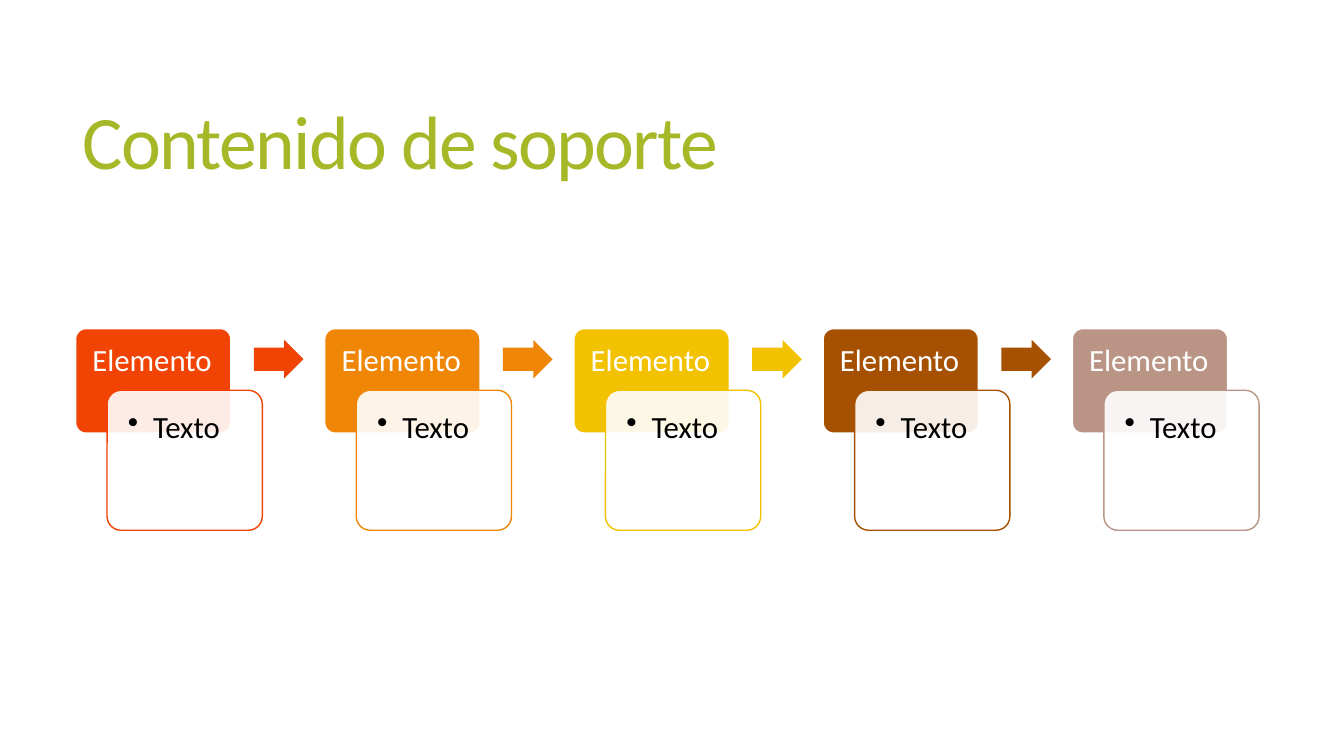
from lxml.etree import SubElement
from pptx import Presentation
from pptx.dml.color import RGBColor
from pptx.enum.shapes import MSO_SHAPE as Preset
from pptx.enum.text import MSO_ANCHOR as Anchor, PP_ALIGN as Align
from pptx.oxml.ns import qn
from pptx.util import Pt

WHITE = RGBColor(0xFF, 0xFF, 0xFF)
BLACK = RGBColor(0x00, 0x00, 0x00)
GREEN = RGBColor(0xA6, 0xB7, 0x27)
STEP_COLORS = [
    RGBColor(0xF0, 0x43, 0x04),
    RGBColor(0xEF, 0x86, 0x06),
    RGBColor(0xF2, 0xC1, 0x00),
    RGBColor(0xA6, 0x50, 0x01),
    RGBColor(0xBA, 0x95, 0x85),
]
FIRST_LEFT = 54
STEP_PITCH = 178


class SlideBuilder:
    font = "Calibri"

    def __init__(self, page):
        self.page = page

    def shape(self, preset, bounds, adjustments, fill, line=None, opacity=None):
        shape = self.page.shapes.add_shape(preset, *map(Pt, bounds))
        shape.shadow.inherit = False
        for index, value in enumerate(adjustments):
            shape.adjustments[index] = value
        shape.fill.solid()
        shape.fill.fore_color.rgb = fill
        if opacity is not None:
            color = shape.fill._xPr.find(qn("a:solidFill"))[0]
            SubElement(color, qn("a:alpha"), val=str(opacity * 1000))
        if line is None:
            shape.line.fill.background()
        else:
            shape.line.color.rgb = line
            shape.line.width = Pt(1)

    def text(self, bounds, words, size, color, insets, spacing=0.9,
             anchor=Anchor.TOP, bullet=False, tracking=None):
        box = self.page.shapes.add_textbox(*map(Pt, bounds))
        frame = box.text_frame
        frame.word_wrap = True
        frame.vertical_anchor = anchor
        (frame.margin_left, frame.margin_top,
         frame.margin_right, frame.margin_bottom) = map(Pt, insets)
        para = frame.paragraphs[0]
        para.alignment = Align.LEFT
        para.line_spacing = spacing
        if bullet:
            props = para._p.get_or_add_pPr()
            props.set("marL", str(Pt(18)))
            props.set("indent", str(-Pt(18)))
            SubElement(props, qn("a:buChar"), char="•")
        span = para.add_run()
        span.text = words
        span.font.name = self.font
        span.font.size = Pt(size)
        span.font.color.rgb = color
        if tracking is not None:
            span._r.get_or_add_rPr().set("spc", str(round(tracking * 100)))

    def step(self, left, color, has_arrow):
        self.shape(Preset.ROUNDED_RECTANGLE, (left, 234.7, 110.9, 74.7),
                   [0.1], color, WHITE)
        self.text((left, 234.7, 110.9, 44.6), "Elemento", 22, WHITE,
                  (12, 12, 12, 6.5))
        self.shape(Preset.ROUNDED_RECTANGLE, (left + 22.5, 278.8, 110.9, 100),
                   [0.1], WHITE, color, opacity=90)
        self.text((left + 25.4, 282, 105, 93.6), "Texto", 22, BLACK,
                  (12, 12, 12, 12), bullet=True)
        if has_arrow:
            self.shape(Preset.RIGHT_ARROW, (left + 127.3, 242.8, 35.5, 27.6),
                       [0.6, 0.5], color)


def main():
    deck = Presentation()
    deck.slide_width = Pt(960)
    deck.slide_height = Pt(540)
    builder = SlideBuilder(deck.slides.add_slide(deck.slide_layouts[6]))
    builder.text((52, 39.6, 848, 130.4), "Contenido de soporte", 54, GREEN,
                 (7.2, 3.6, 7.2, 3.6), spacing=0.85, anchor=Anchor.MIDDLE,
                 tracking=-1.2)
    for index, color in enumerate(STEP_COLORS):
        builder.step(FIRST_LEFT + index * STEP_PITCH, color,
                     has_arrow=index < len(STEP_COLORS) - 1)
    deck.save("out.pptx")


if __name__ == "__main__":
    main()
